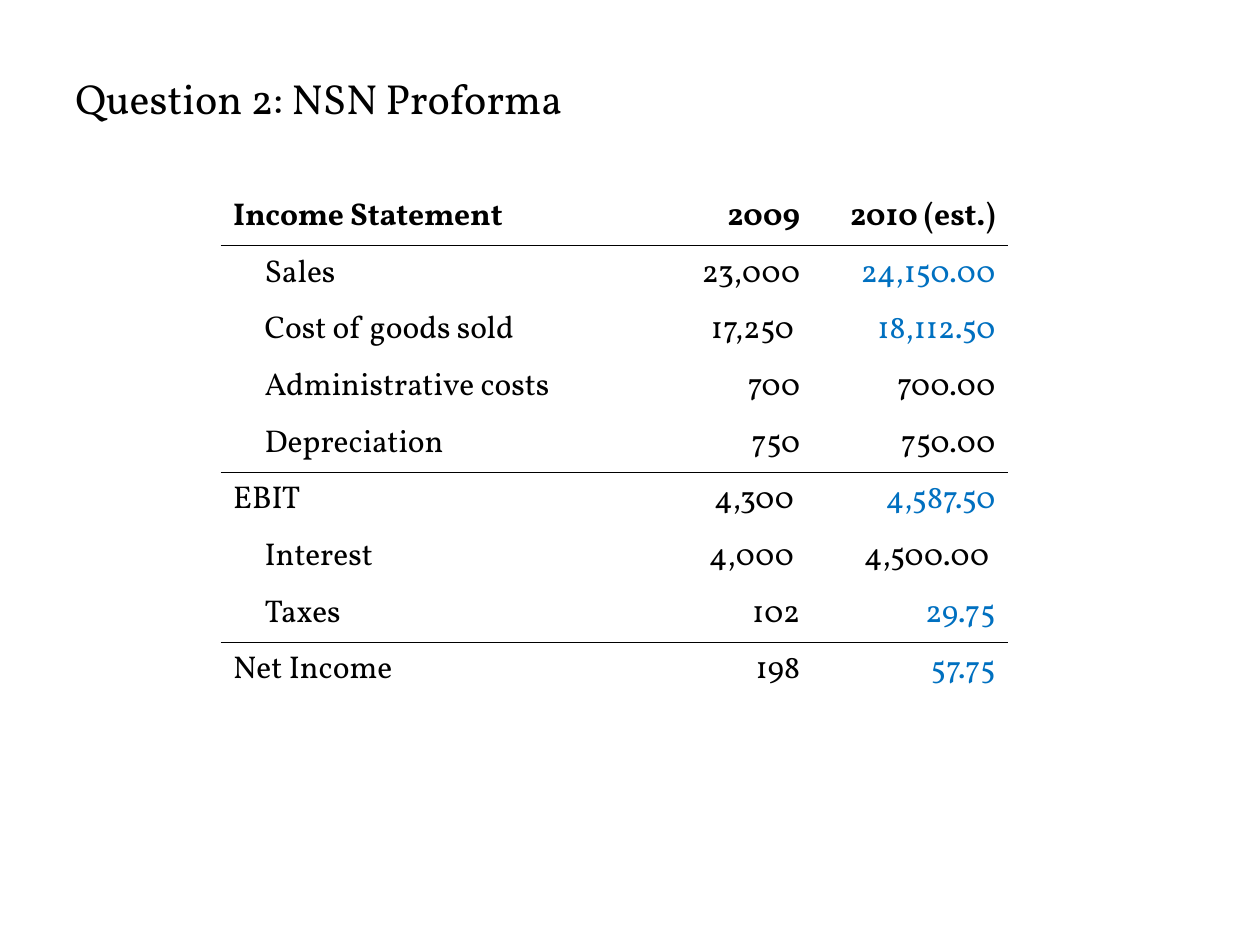
import dataclasses

import pptx
import pptx.dml.color
import pptx.enum.text
import pptx.oxml
import pptx.oxml.ns
import pptx.util
from pptx.util import Inches

RGB = pptx.dml.color.RGBColor.from_string
ALIGN = pptx.enum.text.PP_ALIGN
NO_STYLE_NO_GRID = "{2D5ABB26-0587-4C30-8999-92F81FD0307C}"


@dataclasses.dataclass(frozen=True)
class Theme:
    font: str = "Vollkorn"
    text: str = "000000"
    estimate: str = "0070C0"
    title_size: int = 24
    body_size: int = 18
    rule_width: int = 1
    indent: float = 0.25


THEME = Theme()

HEADER = ("Income Statement", "2009", "2010 (est.)")
# label, 2009, 2010, indented, 2010 figure is computed
LINES = [
    ("Sales", "23,000", "24,150.00", True, True),
    ("Cost of goods sold", "17,250 ", "18,112.50", True, True),
    ("Administrative costs", "700", "700.00", True, False),
    ("Depreciation", "750", "750.00", True, False),
    ("EBIT", "4,300 ", "4,587.50", False, True),
    ("Interest", "4,000 ", "4,500.00 ", True, False),
    ("Taxes", "102", "29.75", True, True),
    ("Net Income", "198", "57.75", False, True),
]
RULED_ROWS = (0, 4, 7)
COLUMN_WIDTHS = (2.8, 1.9, 1.55)
ROW_HEIGHT = 0.45


def set_font(p, size, color=THEME.text, bold=False):
    p.font.name = THEME.font
    p.font.size = pptx.util.Pt(size)
    p.font.bold = bold
    p.font.color.rgb = RGB(color)


def set_rules(cell, above, below):
    """Show or hide the rules above and below a cell."""
    tcPr = cell._tc.get_or_add_tcPr()
    solid = f'<a:solidFill><a:srgbClr val="{THEME.text}"/></a:solidFill>'
    for edge, shown in (("T", above), ("B", below)):
        tcPr.append(pptx.oxml.parse_xml(
            f'<a:ln{edge} {pptx.oxml.ns.nsdecls("a")} w="{pptx.util.Pt(THEME.rule_width)}">'
            f'{solid if shown else "<a:noFill/>"}</a:ln{edge}>'))


def add_title(s, left, top, width, height, text):
    tf = s.shapes.add_textbox(Inches(left), Inches(top), Inches(width), Inches(height)).text_frame
    tf.word_wrap = True
    tf.vertical_anchor = pptx.enum.text.MSO_ANCHOR.MIDDLE
    p = tf.paragraphs[0]
    p.text = text
    set_font(p, THEME.title_size)


def add_income_statement(s, left, top):
    rows = [(*HEADER, False, False), *LINES]
    table = s.shapes.add_table(
        len(rows), len(COLUMN_WIDTHS), Inches(left), Inches(top),
        Inches(sum(COLUMN_WIDTHS)), Inches(ROW_HEIGHT * len(rows))).table
    table.horz_banding = False
    table._tbl.tblPr.find(pptx.oxml.ns.qn("a:tableStyleId")).text = NO_STYLE_NO_GRID
    for column, width in zip(table.columns, COLUMN_WIDTHS):
        column.width = Inches(width)

    for i, (*texts, indented, computed) in enumerate(rows):
        table.rows[i].height = Inches(ROW_HEIGHT)
        for j, text in enumerate(texts):
            cell = table.cell(i, j)
            set_rules(cell, above=i - 1 in RULED_ROWS, below=i in RULED_ROWS)
            cell.fill.background()
            p = cell.text_frame.paragraphs[0]
            p.text = text
            p.alignment = ALIGN.RIGHT if j else ALIGN.LEFT
            color = THEME.estimate if computed and j == 2 else THEME.text
            set_font(p, THEME.body_size, color, bold=i == 0)
            if indented and j == 0:
                p._p.get_or_add_pPr().set("marL", str(Inches(THEME.indent)))


def main():
    prs = pptx.Presentation()
    prs.slide_width, prs.slide_height = Inches(10), Inches(7.5)
    s = prs.slides.add_slide(prs.slide_layouts[6])
    add_title(s, 0.5, 0.3, 9, 0.95, "Question 2: NSN Proforma")
    add_income_statement(s, 1.75, 1.5)
    prs.save("out.pptx")


if __name__ == "__main__":
    main()
